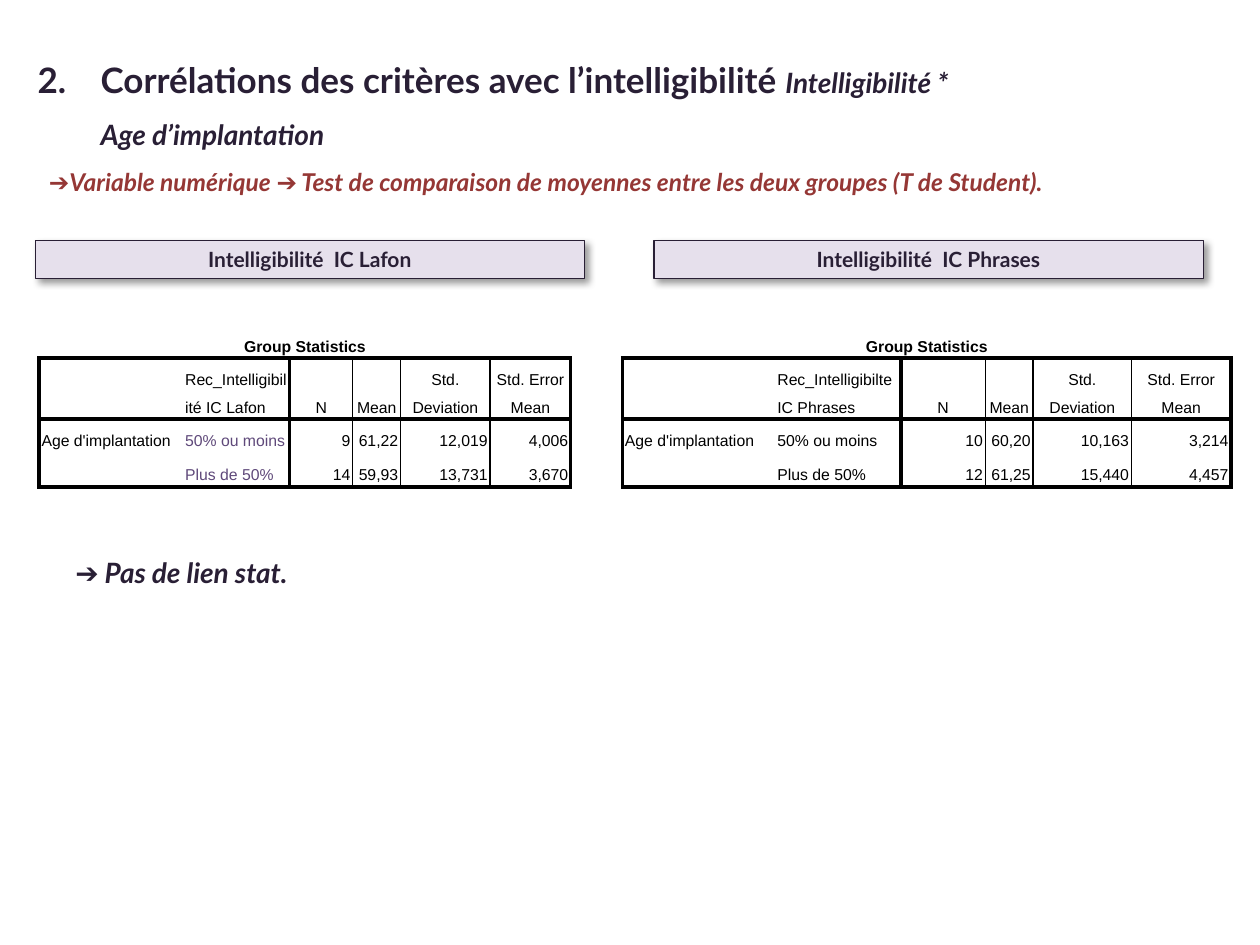
from lxml import etree
from pptx import Presentation
from pptx import util as u
from pptx.dml.color import RGBColor
from pptx.enum import shapes, text
from pptx.oxml import ns

COLORS = {"ink": "291F35", "red": "953735", "lavender": "E6E0EC", "purple": "5F497A",
          "black": "000000", "white": "FFFFFF"}
COLUMNS, ROWS = 100, 75
NO_STYLE = "{2D5ABB26-0587-4C30-8999-92F81FD0307C}"
THICK, THIN = 2.25, 1
TABLE_ROWS = [2.6, 4.8, 2.7, 2.7]
LEFT, CENTER, RIGHT = text.PP_ALIGN.LEFT, text.PP_ALIGN.CENTER, text.PP_ALIGN.RIGHT
TOP, MIDDLE, BOTTOM = text.MSO_ANCHOR.TOP, text.MSO_ANCHOR.MIDDLE, text.MSO_ANCHOR.BOTTOM

presentation = Presentation()
presentation.slide_width, presentation.slide_height = u.Inches(10), u.Inches(7.5)


def across(columns):
    return round(presentation.slide_width * columns / COLUMNS)


def down(rows):
    return round(presentation.slide_height * rows / ROWS)


def place(box):
    left, top, width, height = box
    return across(left), down(top), across(width), down(height)


def color(name):
    return RGBColor.from_string(COLORS[name])


def add_run(paragraph, words, size, ink="ink", face="Lato", bold=True, italic=False):
    run = paragraph.add_run()
    run.text = words
    font = run.font
    font.name, font.size, font.bold, font.italic = face, u.Pt(size), bold, italic
    font.color.rgb = color(ink)


def add_text(slide, box):
    frame = slide.shapes.add_textbox(*place(box)).text_frame
    frame.word_wrap = True
    frame.auto_size = text.MSO_AUTO_SIZE.SHAPE_TO_FIT_TEXT
    return frame.paragraphs[0]


def add_heading(slide, box):
    paragraph = add_text(slide, box)
    paragraph.line_spacing = 1.5
    properties = paragraph._p.get_or_add_pPr()
    properties.set("marL", str(across(5)))
    properties.set("indent", str(-across(5)))
    add_run(paragraph, "2.\tCorrélations des critères avec l’intelligibilité ", 20)
    add_run(paragraph, "Intelligibilité * Age d’implantation", 16, italic=True)


def add_remark(slide, box, words, size, ink):
    add_run(add_text(slide, box), words, size, ink, italic=True)


def add_banner(slide, box, words):
    shape = slide.shapes.add_shape(shapes.MSO_SHAPE.RECTANGLE, *place(box))
    shape.shadow.inherit = False
    shape.fill.solid()
    shape.fill.fore_color.rgb = color("lavender")
    shape.line.color.rgb = color("ink")
    shape.line.width = u.Pt(0.75)
    effects = shape._element.spPr.find(ns.qn("a:effectLst"))
    shadow = etree.SubElement(effects, ns.qn("a:outerShdw"), blurRad=str(u.Pt(4)),
                              dist=str(u.Pt(3)), dir=str(45 * 60000), algn="tl")
    tint = etree.SubElement(shadow, ns.qn("a:srgbClr"), val=COLORS["black"])
    etree.SubElement(tint, ns.qn("a:alpha"), val="40000")
    frame = shape.text_frame
    frame.word_wrap = True
    frame.auto_size = text.MSO_AUTO_SIZE.SHAPE_TO_FIT_TEXT
    frame.vertical_anchor = MIDDLE
    frame.paragraphs[0].alignment = CENTER
    add_run(frame.paragraphs[0], words, 12)


def border_cell(cell, left=0, right=0, top=0, bottom=0):
    properties = cell._tc.get_or_add_tcPr()
    sides = {"a:lnL": left, "a:lnR": right, "a:lnT": top, "a:lnB": bottom}
    for position, (tag, width) in enumerate(sides.items()):
        line = etree.Element(ns.qn(tag), w=str(u.Pt(width)))
        if width:
            fill = etree.SubElement(line, ns.qn("a:solidFill"))
            etree.SubElement(fill, ns.qn("a:srgbClr"), val=COLORS["black"])
        else:
            etree.SubElement(line, ns.qn("a:noFill"))
        properties.insert(position, line)


def fill_cell(cell, words, align, anchor, ink="black", bold=False):
    cell.margin_left = cell.margin_right = cell.margin_top = cell.margin_bottom = u.Inches(0.02)
    cell.vertical_anchor = anchor
    cell.fill.solid()
    cell.fill.fore_color.rgb = color("white")
    paragraph = cell.text_frame.paragraphs[0]
    paragraph.alignment = align
    paragraph.line_spacing = u.Pt(16)
    if words:
        add_run(paragraph, words, 9, ink, "Arial", bold)


def add_statistics(slide, box, widths, group, values, group_ink):
    rows = [["Group Statistics"] + [""] * 5,
            ["", group, "N", "Mean", "Std. Deviation", "Std. Error Mean"],
            ["Age d'implantation", "50% ou moins"] + values[0],
            ["", "Plus de 50%"] + values[1]]
    frame = slide.shapes.add_table(len(rows), len(widths), *place(box))
    table = frame.table
    table.first_row = table.horz_banding = False
    table._tbl.tblPr.find(ns.qn("a:tableStyleId")).text = NO_STYLE
    for column, width in zip(table.columns, widths):
        column.width = across(width)
    for row, height in zip(table.rows, TABLE_ROWS):
        row.height = down(height)
    table.cell(0, 0).merge(table.cell(0, 5))
    table.cell(2, 0).merge(table.cell(3, 0))
    verticals = [THICK, 0, THICK, THIN, THIN, THIN, THICK]
    horizontals = [0, THICK, THICK, 0, THICK]
    for r, row in enumerate(rows):
        for c, words in enumerate(row):
            cell = table.cell(r, c)
            if r == 0:
                fill_cell(cell, words, CENTER, MIDDLE, bold=True)
                border_cell(cell, bottom=THICK)
                continue
            align = LEFT if c < 2 else CENTER if r == 1 else RIGHT
            ink = group_ink if c == 1 and r > 1 else "black"
            fill_cell(cell, words, align, BOTTOM if r == 1 else TOP, ink)
            lower = THICK if c == 0 else horizontals[r + 1]
            border_cell(cell, verticals[c], verticals[c + 1], horizontals[r], lower)


def main():
    slide = presentation.slides.add_slide(presentation.slide_layouts[6])
    add_heading(slide, (2, 2.5, 75.2, 15.1))
    add_banner(slide, (2.8, 19.1, 43.6, 3), "Intelligibilité  IC Lafon")
    add_banner(slide, (51.9, 19.1, 43.6, 3), "Intelligibilité  IC Phrases")
    add_remark(slide, (5, 43.6, 88.3, 3.7), "➔ Pas de lien stat.", 16, "ink")
    add_statistics(slide, (3.1, 25.8, 42.3, 12.8), [11.4, 8.5, 5, 3.8, 7.1, 6.4],
                   "Rec_Intelligibilité IC Lafon",
                   [["9", "61,22", "12,019", "4,006"], ["14", "59,93", "13,731", "3,670"]],
                   "purple")
    add_statistics(slide, (49.4, 25.8, 48.3, 12.8), [12.1, 10, 6.7, 3.8, 7.8, 7.9],
                   "Rec_Intelligibilte IC Phrases",
                   [["10", "60,20", "10,163", "3,214"], ["12", "61,25", "15,440", "4,457"]],
                   "black")
    add_remark(slide, (2.9, 12.8, 88.3, 5.7),
               "➔Variable numérique ➔ Test de comparaison de moyennes entre les deux groupes "
               "(T de Student).", 14, "red")
    presentation.save("out.pptx")


if __name__ == "__main__":
    main()
